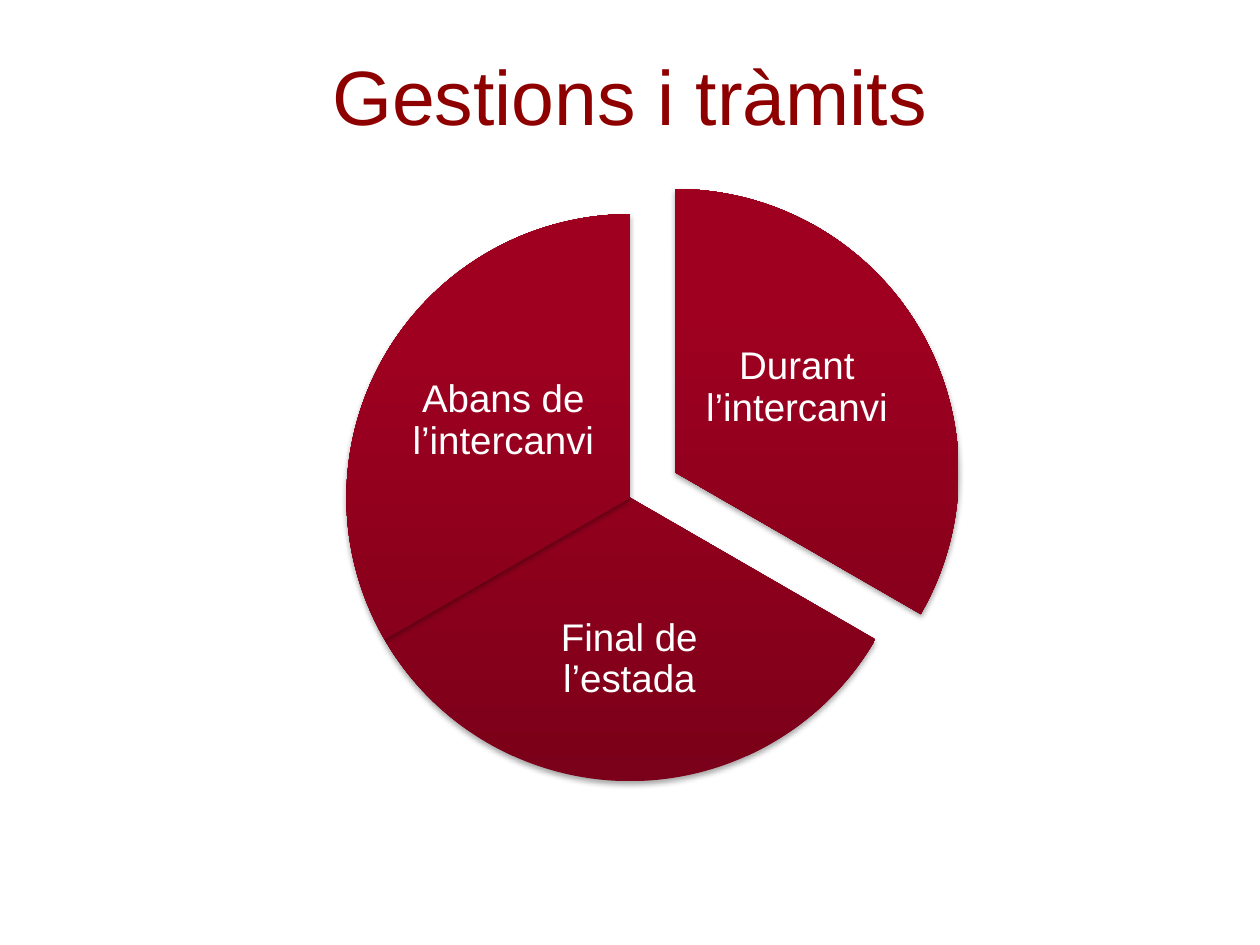
from copy import deepcopy

from lxml import etree
from pptx import Presentation
from pptx.dml.color import RGBColor
from pptx.enum.shapes import MSO_SHAPE
from pptx.enum.text import MSO_ANCHOR, PP_ALIGN
from pptx.oxml.ns import qn
from pptx.util import Inches, Pt

PIE = MSO_SHAPE.PIE
CENTER = PP_ALIGN.CENTER
MIDDLE = MSO_ANCHOR.MIDDLE

FONT = "Arial"
WHITE = RGBColor(0xFF, 0xFF, 0xFF)
TITLE_RED = RGBColor(0x8E, 0x00, 0x00)
GRADIENT = [
    (0, RGBColor(0x7B, 0x00, 0x19)),
    (0.8, RGBColor(0xA0, 0x00, 0x20)),
    (1, RGBColor(0xA1, 0x00, 0x20)),
]
DIAMETER = 4.5
ANGLE_UNITS = 0.6  # adjustment units per degree

# Label, pie corner, start and end angle, label box
STAGES = [
    ("Durant l’intercanvi", (3.11, 1.5), (270, 30), (5.56, 2.33, 1.53, 1.5)),
    ("Final de l’estada", (2.75, 1.7), (30, 150), (3.98, 4.54, 2.03, 1.39)),
    ("Abans de l’intercanvi", (2.75, 1.7), (150, 270), (3.23, 2.59, 1.53, 1.5)),
]


class SlideBuilder:
    def __init__(self, slide):
        self.slide = slide

    def text(self, wording, box, size, color, inset=None, line_spacing=None):
        frame = self.slide.shapes.add_textbox(*map(Inches, box)).text_frame
        frame.word_wrap = True
        frame.vertical_anchor = MIDDLE
        if inset is not None:
            frame.margin_left = frame.margin_right = Inches(inset)
            frame.margin_top = frame.margin_bottom = Inches(inset)
        paragraph = frame.paragraphs[0]
        paragraph.alignment = CENTER
        paragraph.line_spacing = line_spacing
        run = paragraph.add_run()
        run.text = wording
        run.font.name = FONT
        run.font.size = Pt(size)
        run.font.color.rgb = color

    def sector(self, corner, angles):
        left, top = map(Inches, corner)
        sector = self.slide.shapes.add_shape(
            PIE, left, top, Inches(DIAMETER), Inches(DIAMETER))
        for index, angle in enumerate(angles):
            sector.adjustments[index] = angle * ANGLE_UNITS
        sector.line.fill.background()
        self.shade(sector)
        self.cast_shadow(sector)

    def shade(self, shape):
        """Fill with the three-stop gradient, darkest at the bottom."""
        shape.fill.gradient()
        shape.fill.gradient_angle = 90
        stops = shape._element.spPr.find(qn("a:gradFill")).find(qn("a:gsLst"))
        stops.append(deepcopy(stops[-1]))
        for stop, (position, color) in zip(shape.fill.gradient_stops, GRADIENT):
            stop.position = position
            stop.color.rgb = color

    def cast_shadow(self, shape):
        shape.shadow.inherit = False
        effects = shape._element.spPr.find(qn("a:effectLst"))
        shadow = etree.SubElement(
            effects, qn("a:outerShdw"), blurRad=str(Pt(3.1)), dist=str(Pt(1.8)),
            dir="5400000", rotWithShape="0")
        color = etree.SubElement(shadow, qn("a:srgbClr"), val="000000")
        etree.SubElement(color, qn("a:alpha"), val="35000")


def main():
    presentation = Presentation()
    presentation.slide_width = Inches(10)
    presentation.slide_height = Inches(7.5)
    builder = SlideBuilder(
        presentation.slides.add_slide(presentation.slide_layouts[6]))
    builder.text("Gestions i tràmits", (0.75, 0.13, 8.5, 1.25), 44, TITLE_RED)
    for label, corner, angles, label_box in STAGES:
        builder.sector(corner, angles)
        builder.text(label, label_box, 22, WHITE, inset=0.03, line_spacing=0.9)
    presentation.save("out.pptx")


if __name__ == "__main__":
    main()
